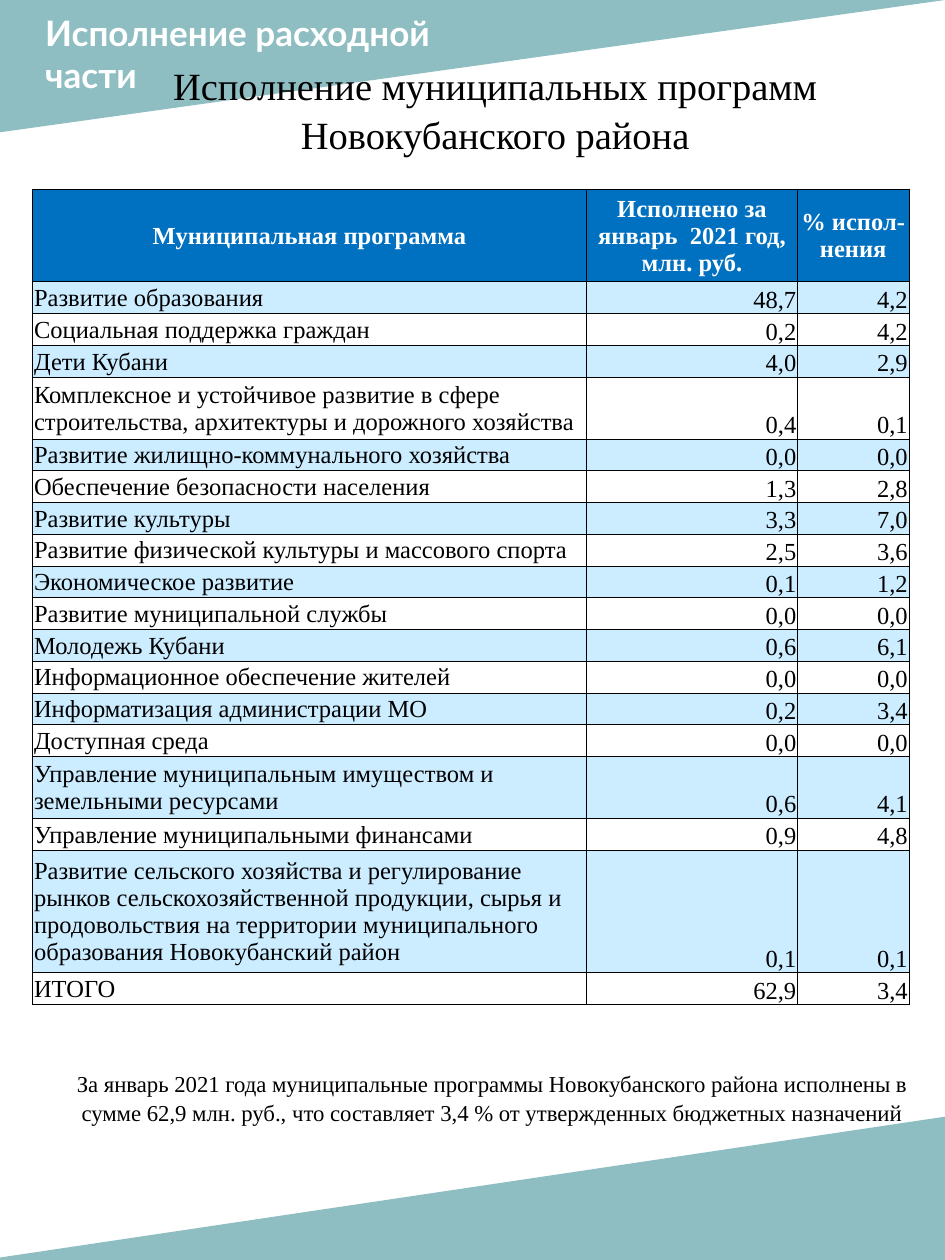
from lxml import etree
from pptx import Presentation
from pptx import util as u
from pptx.dml.color import RGBColor
from pptx.enum import shapes, text
from pptx.oxml import ns

COLORS = {
    "teal": "519AA0", "header": "0070C0", "band": "CCECFF",
    "white": "FFFFFF", "black": "000000",
}
SERIF = "Times New Roman"

deck = Presentation()
deck.slide_width, deck.slide_height = u.Inches(7.5), u.Inches(10)
column, row = deck.slide_width / 100, deck.slide_height / 100
page = deck.slides.add_slide(deck.slide_layouts[5])
title = page.shapes.title


def area(left, top, width, height):
    return [u.Emu(round(n * unit)) for n, unit in
            zip((left, top, width, height), (column, row, column, row))]


def write(frame, lines, size, font, color, bold, align, spacing=1.0):
    frame.word_wrap = True
    for number, line in enumerate(lines):
        para = frame.add_paragraph() if number else frame.paragraphs[0]
        para.alignment = align
        para.line_spacing = spacing
        span = para.add_run()
        span.text = line
        span.font.size = u.Pt(size)
        span.font.name = font
        span.font.bold = bold
        span.font.color.rgb = RGBColor.from_string(COLORS[color])


wedges = [((0, 0, 100, 10.5), "flipH"), ((-1.73, 88.6, 102, 11.4), "flipV")]
for place, flip in wedges:
    wedge = page.shapes.add_shape(shapes.MSO_SHAPE.RIGHT_TRIANGLE, *area(*place))
    wedge.rotation = 180
    wedge.element.spPr.find(ns.qn("a:xfrm")).set(flip, "1")
    wedge.shadow.inherit = False
    wedge.line.fill.background()
    wedge.fill.solid()
    wedge.fill.fore_color.rgb = RGBColor.from_string(COLORS["teal"])
    tint = wedge.element.spPr.find(".//" + ns.qn("a:srgbClr"))
    etree.SubElement(tint, ns.qn("a:alpha")).set("val", "64000")
    title.element.addprevious(wedge.element)

title.left, title.top, title.width, title.height = area(8.53, 4.1, 87.73, 8.3)
title.text_frame.auto_size = text.MSO_AUTO_SIZE.NONE
title.text_frame.vertical_anchor = text.MSO_ANCHOR.TOP
write(title.text_frame, ["Исполнение муниципальных программ Новокубанского района"],
      22, SERIF, "black", False, text.PP_ALIGN.CENTER, 1.08)

section = page.shapes.add_textbox(*area(3.47, 0.4, 64.93, 7.7))
write(section.text_frame, ["Исполнение расходной", "части"],
      20, "Lato", "white", True, text.PP_ALIGN.LEFT)

summary = page.shapes.add_textbox(*area(3.47, 84.2, 97.07, 5.4))
write(summary.text_frame,
      ["За январь 2021 года муниципальные программы Новокубанского района исполнены "
       "в сумме 62,9 млн. руб., что составляет 3,4 % от утвержденных бюджетных назначений"],
      13, SERIF, "black", False, text.PP_ALIGN.CENTER, 1.08)

HEADER, ONE_LINE, TWO_LINES, FOUR_LINES = 7.37, 2.52, 4.91, 9.75
programs = [
    ("Муниципальная программа", "Исполнено за январь  2021 год, млн. руб.", "% испол-нения", HEADER),
    ("Развитие образования", "48,7", "4,2", ONE_LINE),
    ("Социальная поддержка граждан", "0,2", "4,2", ONE_LINE),
    ("Дети Кубани", "4,0", "2,9", ONE_LINE),
    ("Комплексное и устойчивое развитие в сфере строительства, архитектуры "
     "и дорожного хозяйства", "0,4", "0,1", TWO_LINES),
    ("Развитие жилищно-коммунального хозяйства", "0,0", "0,0", ONE_LINE),
    ("Обеспечение безопасности населения", "1,3", "2,8", ONE_LINE),
    ("Развитие культуры", "3,3", "7,0", ONE_LINE),
    ("Развитие физической культуры и массового спорта", "2,5", "3,6", ONE_LINE),
    ("Экономическое развитие", "0,1", "1,2", ONE_LINE),
    ("Развитие муниципальной службы", "0,0", "0,0", ONE_LINE),
    ("Молодежь Кубани", "0,6", "6,1", ONE_LINE),
    ("Информационное обеспечение жителей", "0,0", "0,0", ONE_LINE),
    ("Информатизация администрации МО", "0,2", "3,4", ONE_LINE),
    ("Доступная среда", "0,0", "0,0", ONE_LINE),
    ("Управление муниципальным имуществом и земельными ресурсами", "0,6", "4,1", TWO_LINES),
    ("Управление муниципальными финансами", "0,9", "4,8", ONE_LINE),
    ("Развитие сельского хозяйства и регулирование рынков сельскохозяйственной "
     "продукции, сырья и продовольствия на территории муниципального образования "
     "Новокубанский район", "0,1", "0,1", FOUR_LINES),
    ("ИТОГО", "62,9", "3,4", ONE_LINE),
]
widths = [58.6, 22.33, 11.8]
table_height = sum(program[-1] for program in programs)
table = page.shapes.add_table(
    len(programs), len(widths), *area(3.47, 15, sum(widths), table_height)).table
for table_column, width in zip(table.columns, widths):
    table_column.width = round(width * column)

for r, (*values, height) in enumerate(programs):
    table.rows[r].height = round(height * row)
    for c, value in enumerate(values):
        cell = table.cell(r, c)
        cell.margin_left = cell.margin_right = cell.margin_top = u.Inches(0.01)
        cell.margin_bottom = 0
        heading = r == 0
        number = c > 0 and not heading
        cell.vertical_anchor = text.MSO_ANCHOR.BOTTOM if number else text.MSO_ANCHOR.MIDDLE
        for side in ("lnL", "lnR", "lnT", "lnB"):
            edge = etree.SubElement(cell._tc.get_or_add_tcPr(), ns.qn("a:" + side), w="6350")
            paint = etree.SubElement(edge, ns.qn("a:solidFill"))
            etree.SubElement(paint, ns.qn("a:srgbClr"), val=COLORS["black"])
        cell.fill.solid()
        shade = "header" if heading else "band" if r % 2 else "white"
        cell.fill.fore_color.rgb = RGBColor.from_string(COLORS[shade])
        align = (text.PP_ALIGN.CENTER if heading else
                 text.PP_ALIGN.RIGHT if number else text.PP_ALIGN.LEFT)
        write(cell.text_frame, [value], 14, SERIF,
              "white" if heading else "black", heading, align)

deck.save("out.pptx")
